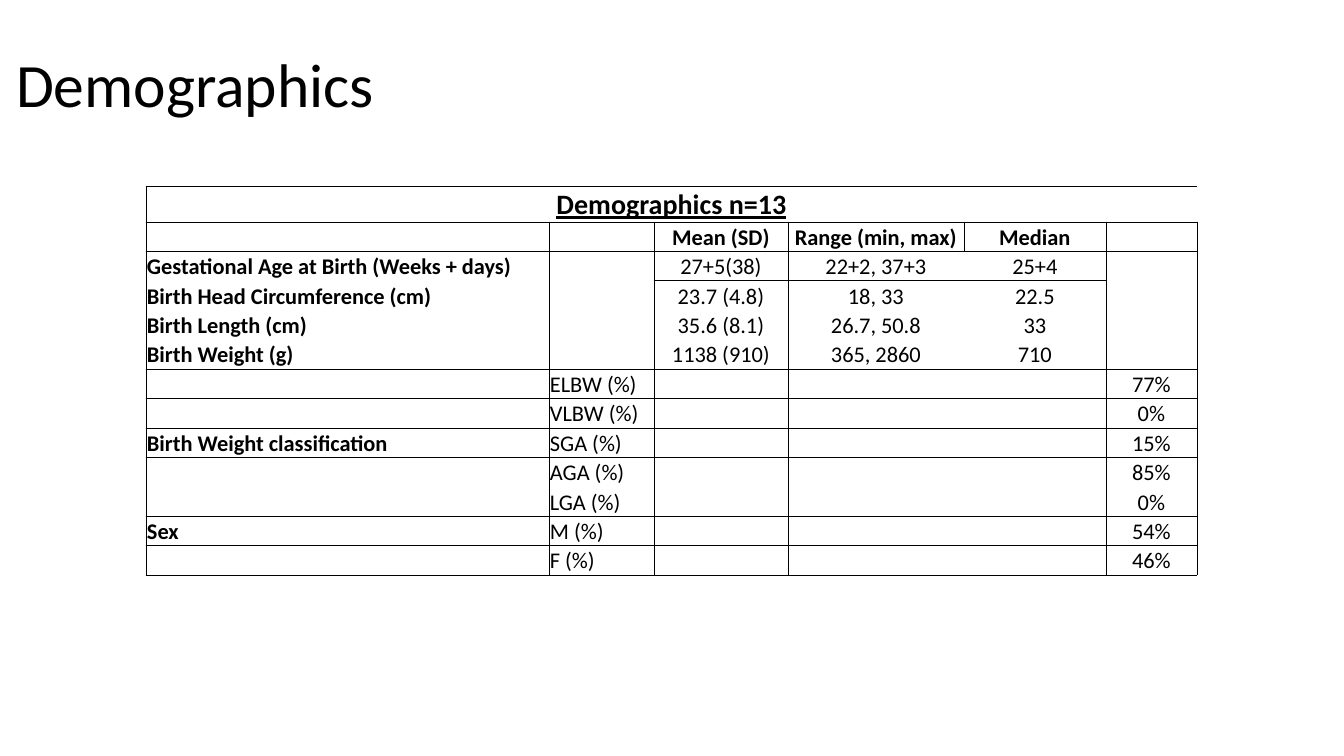
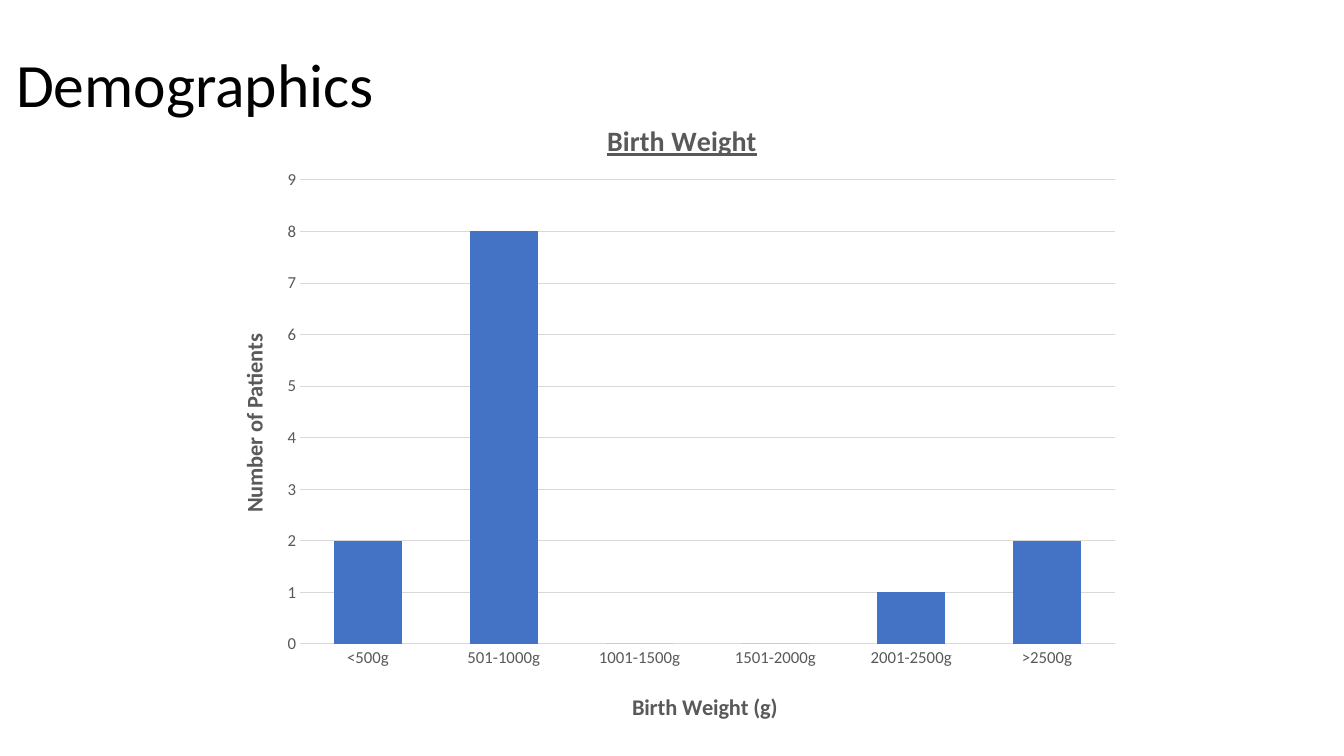
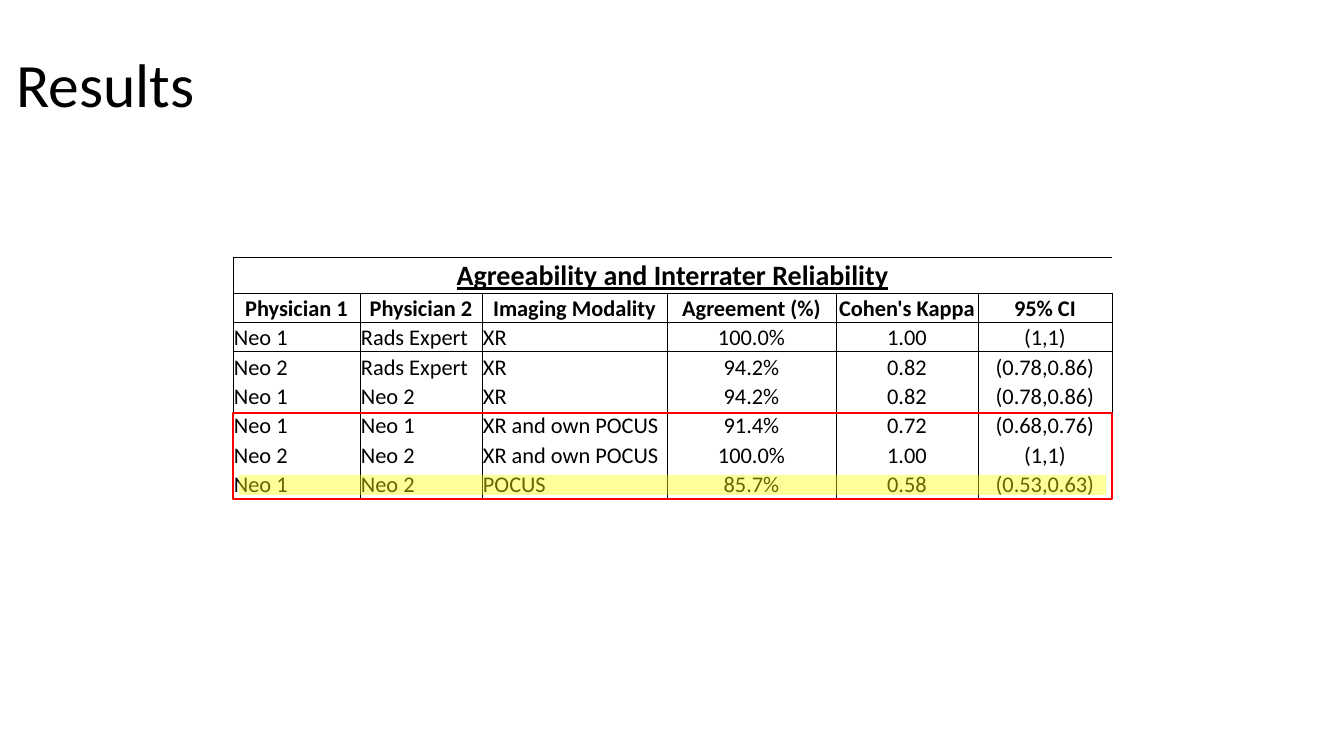
from collections import defaultdict, namedtuple
from itertools import product

from lxml.etree import SubElement
from pptx import Presentation
from pptx.chart.data import CategoryChartData
from pptx.dml.color import RGBColor
from pptx.enum.chart import XL_CHART_TYPE as ChartType, XL_TICK_MARK as TickMark
from pptx.enum.shapes import MSO_SHAPE as Preset
from pptx.enum.text import MSO_ANCHOR as Anchor, MSO_AUTO_SIZE as AutoSize, PP_ALIGN as Align
from pptx.oxml import parse_xml
from pptx.oxml.ns import nsdecls, qn
from pptx.util import Emu, Pt

BLACK = RGBColor(0x00, 0x00, 0x00)
GRAY = RGBColor(0x59, 0x59, 0x59)
PALE_GRAY = RGBColor(0xD9, 0xD9, 0xD9)
BLUE = RGBColor(0x44, 0x72, 0xC4)
RED = RGBColor(0xFF, 0x00, 0x00)
YELLOW = RGBColor(0xFF, 0xFF, 0x00)

FONT = "Calibri"
SCALE = 914400 / 100.8
PLAIN_TABLE = "{2D5ABB26-0587-4C30-8999-92F81FD0307C}"
EDGES = ("lnL", "lnR", "lnT", "lnB")
CAPTION_HEIGHT = 36

Box = namedtuple("Box", "left top width height")
TITLE_BOX = Box(6, 15, 1159, 146)


def px(length):
    return Emu(round(length * SCALE))


def set_all(target, values):
    for name, value in values.items():
        setattr(target, name, value)


def place(box):
    return [px(length) for length in box]


def style_font(font, size, color=BLACK, **values):
    set_all(font, {"name": FONT, "size": Pt(size), **values})
    font.color.rgb = color


def add_titled_page(deck, text):
    page = deck.slides.add_slide(deck.slide_layouts[5])
    title = page.shapes.title
    set_all(title, dict(zip(Box._fields, place(TITLE_BOX))))
    frame = title.text_frame
    frame.text = text
    set_all(frame, {"vertical_anchor": Anchor.MIDDLE, "auto_size": AutoSize.NONE, "word_wrap": True})
    para = frame.paragraphs[0]
    set_all(para, {"alignment": Align.LEFT, "line_spacing": 0.9})
    style_font(para.runs[0].font, 44)
    return page


def write_cell(cell, text, size, align, **values):
    set_all(cell, {"margin_left": px(1), "margin_right": px(1), "margin_top": px(1),
                   "margin_bottom": 0, "vertical_anchor": Anchor.BOTTOM})
    para = cell.text_frame.paragraphs[0]
    para.alignment = align
    if text:
        span = para.add_run()
        span.text = text
        style_font(span.font, size, **values)
    else:
        SubElement(para._p, qn("a:endParaRPr"), sz=str(size * 100))


def draw_outlines(table, blocks):
    edges = defaultdict(set)
    for top, left, bottom, right in blocks:
        for row, column in product(range(top, bottom + 1), range(left, right + 1)):
            outer = (column == left, column == right, row == top, row == bottom)
            edges[row, column].update(edge for edge, drawn in zip(EDGES, outer) if drawn)
    for (row, column), drawn in edges.items():
        props = table.cell(row, column)._tc.get_or_add_tcPr()
        for edge in reversed(EDGES):
            if edge in drawn:
                props.insert(0, parse_xml(
                    f'<a:{edge} {nsdecls("a")} w="6350"><a:solidFill>'
                    f'<a:srgbClr val="{BLACK}"/></a:solidFill></a:{edge}>'))


def add_outlined_table(page, box, caption, rows, widths, left_columns, bold_columns, blocks):
    last = len(widths) - 1
    table = page.shapes.add_table(len(rows) + 1, len(widths), *place(box)).table
    set_all(table, {"first_row": False, "horz_banding": False})
    table._tbl.tblPr.find(qn("a:tableStyleId")).text = PLAIN_TABLE
    for column, width in zip(table.columns, widths):
        column.width = px(width)
    row_height = (box.height - CAPTION_HEIGHT) / len(rows)
    for index, row in enumerate(table.rows):
        row.height = px(row_height if index else CAPTION_HEIGHT)
    table.cell(0, 0).merge(table.cell(0, last))
    write_cell(table.cell(0, 0), caption, 20, Align.CENTER, bold=True, underline=True)
    for r, row in enumerate(rows, 1):
        for c, text in enumerate(row):
            heading = r == 1
            align = Align.LEFT if c < left_columns and not heading else Align.CENTER
            write_cell(table.cell(r, c), text, 16, align, bold=heading or c < bold_columns)
    draw_outlines(table, [(0, 0, 0, last), *blocks])
    for cell in table.iter_cells():
        cell.fill.background()


def set_layout(element, index, box, part):
    for old in element.findall(qn("c:layout")):
        element.remove(old)
    layout = parse_xml(f'<c:layout {nsdecls("c")}><c:manualLayout/></c:layout>')
    manual = layout[0]
    sized = part.width > 0
    values = {"xMode": "edge", "yMode": "edge",
              "x": part.left / box.width, "y": part.top / box.height}
    if sized:
        values = {"layoutTarget": "inner", **values,
                  "w": part.width / box.width, "h": part.height / box.height}
    for name, value in values.items():
        SubElement(manual, qn(f"c:{name}"), val=str(value))
    element.insert(index, layout)


def write_chart_title(owner, text, size, **values):
    owner.has_title = True
    title = owner.chart_title if hasattr(owner, "chart_title") else owner.axis_title
    title.text_frame.text = text
    style_font(title.text_frame.paragraphs[0].runs[0].font, size, GRAY, bold=True, **values)
    return title


def add_weight_chart(page, box):
    data = CategoryChartData()
    data.categories = ["<500g", "501-1000g", "1001-1500g", "1501-2000g", "2001-2500g", ">2500g"]
    data.add_series("Series 1", [2, 8, 0, 0, 1, 2])
    chart = page.shapes.add_chart(ChartType.COLUMN_CLUSTERED, *place(box), data).chart
    chart.has_legend = False
    style_font(chart.font, 10)
    plot = chart.plots[0]
    set_all(plot, {"gap_width": 100, "overlap": -27, "vary_by_categories": False})
    fill = plot.series[0].format.fill
    fill.solid()
    fill.fore_color.rgb = BLUE

    bottom, side = chart.category_axis, chart.value_axis
    for axis in (bottom, side):
        set_all(axis, {"major_tick_mark": TickMark.NONE, "minor_tick_mark": TickMark.NONE})
        style_font(axis.tick_labels.font, 12, GRAY)
    set_all(side, {"minimum_scale": 0, "maximum_scale": 9, "major_unit": 1})
    side.format.line.fill.background()
    for line in (bottom.format.line, side.major_gridlines.format.line):
        line.color.rgb = PALE_GRAY
        line.width = Pt(0.75)

    heading = write_chart_title(chart, "Birth Weight", 20, underline=True)
    bottom_title = write_chart_title(bottom, "Birth Weight (g)", 16)
    side_title = write_chart_title(side, "Number of Patients", 16)
    side_title.text_frame._txBody.bodyPr.set("rot", "-5400000")
    side_title.text_frame._txBody.bodyPr.set("vert", "horz")
    for title, left, top in ((heading, 391, 28), (bottom_title, 417, 600), (side_title, 24, 242)):
        set_layout(title._element, 1, box, Box(left, top, 0, 0))
    set_layout(chart._chartSpace.chart.plotArea, 0, box, Box(89, 92, 815, 464))


def add_marker(page, box, fill=None, alpha=100, line=None):
    marker = page.shapes.add_shape(Preset.RECTANGLE, *place(box))
    marker.shadow.inherit = False
    if fill:
        marker.fill.solid()
        marker.fill.fore_color.rgb = fill
        color = marker.fill._xPr.find(qn("a:solidFill"))[0]
        SubElement(color, qn("a:alpha"), val=str(alpha * 1000))
    else:
        marker.fill.background()
    if line:
        marker.line.color.rgb = line
        marker.line.width = Pt(2)
    else:
        marker.line.fill.background()


def add_demographics_table(page, box):
    rows = [
        ("", "", "Mean (SD)", "Range (min, max)", "Median", ""),
        ("Gestational Age at Birth (Weeks + days)", "", "27+5(38)", "22+2, 37+3", "25+4", ""),
        ("Birth Head Circumference (cm)", "", "23.7 (4.8)", "18, 33", "22.5", ""),
        ("Birth Length (cm)", "", "35.6 (8.1)", "26.7, 50.8", "33", ""),
        ("Birth Weight (g)", "", "1138 (910)", "365, 2860", "710", ""),
        ("", "ELBW (%)", "", "", "", "77%"),
        ("", "VLBW (%)", "", "", "", "0%"),
        ("Birth Weight classification", "SGA (%)", "", "", "", "15%"),
        ("", "AGA (%)", "", "", "", "85%"),
        ("", "LGA (%)", "", "", "", "0%"),
        ("Sex", "M (%)", "", "", "", "54%"),
        ("", "F (%)", "", "", "", "46%"),
    ]
    groups = [(1, 5), (6, 7), (8, 10), (11, 12)]
    spans = [(0, 0), (1, 1), (2, 4), (5, 5)]
    blocks = [(top, left, bottom, right)
              for (top, bottom), (left, right) in product(groups, spans)]
    blocks += [(1, column, 1, column) for column in (2, 3, 4)]
    blocks.append((2, 2, 5, 4))
    add_outlined_table(page, box, "Demographics n=13", rows,
                       [403, 105, 134, 176, 142, 91], 2, 1, blocks)


def add_reliability_table(page, box):
    rows = [
        ("Physician 1", "Physician 2", "Imaging Modality", "Agreement (%)", "Cohen's Kappa", "95% CI"),
        ("Neo 1", "Rads Expert", "XR", "100.0%", "1.00", "(1,1)"),
        ("Neo 2", "Rads Expert", "XR", "94.2%", "0.82", "(0.78,0.86)"),
        ("Neo 1", "Neo 2", "XR", "94.2%", "0.82", "(0.78,0.86)"),
        ("Neo 1", "Neo 1", "XR and own POCUS", "91.4%", "0.72", "(0.68,0.76)"),
        ("Neo 2", "Neo 2", "XR and own POCUS", "100.0%", "1.00", "(1,1)"),
        ("Neo 1", "Neo 2", "POCUS", "85.7%", "0.58", "(0.53,0.63)"),
    ]
    blocks = [(top, column, bottom, column)
              for (top, bottom), column in product([(1, 1), (2, 7)], range(6))]
    add_outlined_table(page, box, "Agreeability and Interrater Reliability", rows,
                       [127, 122, 185, 169, 142, 134], 3, 0, blocks)
    add_marker(page, Box(box.left, box.top + 156, box.width, 86), line=RED)
    add_marker(page, Box(box.left + 6, box.top + 218, box.width - 12, 20), fill=YELLOW, alpha=40)


def main():
    deck = Presentation()
    set_all(deck, {"slide_width": px(1344), "slide_height": px(756)})
    add_demographics_table(add_titled_page(deck, "Demographics"), Box(146, 186, 1051, 389))
    add_weight_chart(add_titled_page(deck, "Demographics"), Box(211, 88, 923, 651))
    add_reliability_table(add_titled_page(deck, "Results"), Box(233, 257, 879, 242))
    deck.save("out.pptx")


if __name__ == "__main__":
    main()
